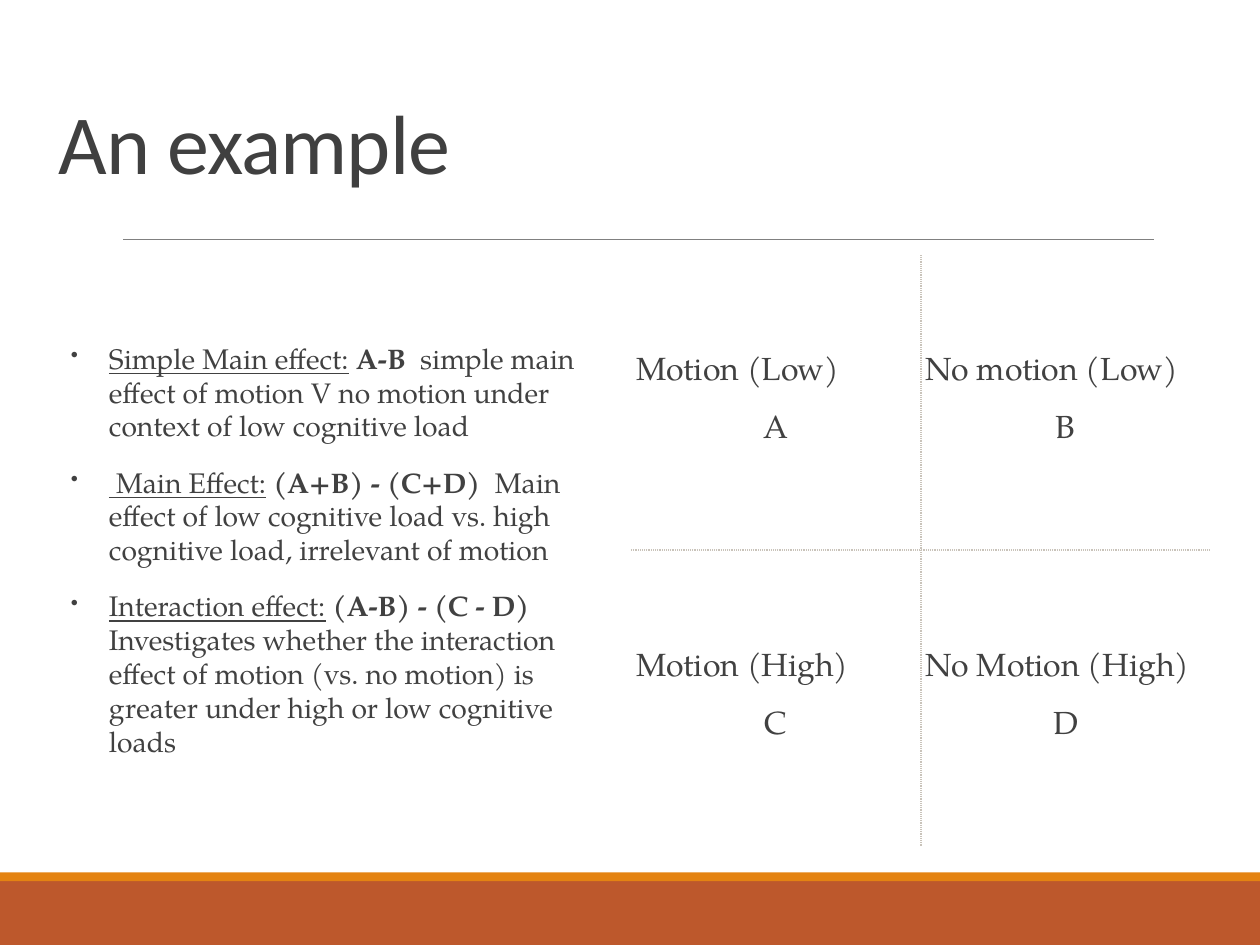
from lxml import etree
from pptx import Presentation
from pptx.dml.color import RGBColor
from pptx.enum.shapes import MSO_CONNECTOR, MSO_SHAPE
from pptx.enum.text import MSO_ANCHOR, PP_ALIGN
from pptx.oxml import parse_xml
from pptx.oxml.ns import nsdecls, qn
from pptx.util import Inches, Pt

RECTANGLE = MSO_SHAPE.RECTANGLE
STRAIGHT = MSO_CONNECTOR.STRAIGHT
BOTTOM, MIDDLE = MSO_ANCHOR.BOTTOM, MSO_ANCHOR.MIDDLE
LEFT, CENTER = PP_ALIGN.LEFT, PP_ALIGN.CENTER

COLORS = {
    "footer": "BD582C",
    "stripe": "E48312",
    "rule": "808080",
    "title": "404040",
    "body": "414141",
    "grid": "C9C3BA",
}
TITLE_FONT = "Calibri"
BODY_FONT = "TeX Gyre Pagella"
INSET = 0.06

EFFECTS = [
    ("Simple Main effect:", "A-B ",
     " simple main effect of motion V no motion under context of low cognitive load"),
    (" Main Effect:", "(A+B) - (C+D) ",
     " Main effect of low cognitive load vs. high cognitive load, irrelevant of motion"),
    ("Interaction effect:", "(A-B) - (C - D) ",
     "Investigates whether the interaction effect of motion (vs. no motion) "
     "is greater under high or low cognitive loads"),
]
CONDITIONS = [
    [("Motion (Low)", "A"), ("No motion (Low)", "B")],
    [("Motion (High)", "C"), ("No Motion (High)", "D")],
]


class SlideBuilder:
    def __init__(self, slide):
        self.slide = slide

    def color(self, name):
        return RGBColor.from_string(COLORS[name])

    def run(self, paragraph, text, size, font=BODY_FONT, color="body", bold=False, underline=False):
        run = paragraph.add_run()
        run.text = text
        run.font.name = font
        run.font.size = Pt(size)
        run.font.color.rgb = self.color(color)
        run.font.bold = bold
        run.font.underline = underline
        return run

    def band(self, top, height, color):
        shape = self.slide.shapes.add_shape(
            RECTANGLE, 0, Inches(top), Inches(14.22), Inches(height))
        shape.shadow.inherit = False
        shape.fill.solid()
        shape.fill.fore_color.rgb = self.color(color)
        shape.line.fill.background()

    def rule(self, left, right, top):
        line = self.slide.shapes.add_connector(
            STRAIGHT, Inches(left), Inches(top), Inches(right), Inches(top))
        line.line.color.rgb = self.color("rule")
        line.line.width = Pt(0.5)
        etree.SubElement(line._element.spPr, qn("a:effectLst"))

    def text_frame(self, left, top, width, height, anchor):
        box = self.slide.shapes.add_textbox(
            Inches(left), Inches(top), Inches(width), Inches(height))
        frame = box.text_frame
        frame.word_wrap = True
        frame.vertical_anchor = anchor
        return frame

    def set_insets(self, target):
        target.margin_left = target.margin_right = Inches(INSET)
        target.margin_top = target.margin_bottom = Inches(INSET)

    def title(self, text):
        frame = self.text_frame(0.56, 0.88, 13.11, 1.33, BOTTOM)
        paragraph = frame.paragraphs[0]
        paragraph.line_spacing = 0.85
        run = self.run(paragraph, text, 68.3, TITLE_FONT, "title")
        run.font._element.set("spc", "-70")

    def bullet(self, paragraph):
        paragraph.space_before = Pt(18)
        properties = paragraph._p.get_or_add_pPr()
        properties.set("marL", str(Inches(0.43)))
        properties.set("indent", str(Inches(-0.43)))
        etree.SubElement(properties, qn("a:buSzPct")).set("val", "75000")
        etree.SubElement(properties, qn("a:buChar")).set("char", "•")

    def effects(self, items):
        frame = self.text_frame(0.74, 3.61, 6.16, 5.19, MIDDLE)
        self.set_insets(frame)
        for index, (name, contrast, meaning) in enumerate(items):
            paragraph = frame.add_paragraph() if index else frame.paragraphs[0]
            self.bullet(paragraph)
            self.run(paragraph, name, 23, underline=True)
            self.run(paragraph, " ", 23)
            self.run(paragraph, contrast, 23, bold=True)
            self.run(paragraph, meaning, 23)

    def borders(self, cell, visible):
        properties = cell._tc.get_or_add_tcPr()
        for side in "LRTB":
            if side in visible:
                content = (f'<a:solidFill><a:srgbClr val="{COLORS["grid"]}"/></a:solidFill>'
                           '<a:prstDash val="sysDot"/>')
            else:
                content = "<a:noFill/>"
            properties.append(parse_xml(
                f'<a:ln{side} {nsdecls("a")} w="{Pt(2)}">{content}</a:ln{side}>'))

    def condition_table(self, rows):
        table = self.slide.shapes.add_table(
            2, 2, Inches(7.12), Inches(2.88), Inches(6.54), Inches(6.67)).table
        table.first_row = table.horz_banding = False
        for row_index, row in enumerate(rows):
            for column_index, (condition, letter) in enumerate(row):
                cell = table.cell(row_index, column_index)
                self.borders(cell, "RL"[column_index] + "BT"[row_index])
                cell.fill.background()
                cell.vertical_anchor = MIDDLE
                self.set_insets(cell)
                heading = cell.text_frame.paragraphs[0]
                heading.alignment = LEFT
                self.run(heading, condition, 26)
                label = cell.text_frame.add_paragraph()
                label.alignment = CENTER
                label.space_before = Pt(21)
                self.run(label, letter, 26)


def main():
    presentation = Presentation()
    presentation.slide_width = Inches(14.22)
    presentation.slide_height = Inches(10.67)
    builder = SlideBuilder(presentation.slides.add_slide(presentation.slide_layouts[6]))
    builder.band(9.95, 0.72, "footer")
    builder.band(9.85, 0.1, "stripe")
    builder.rule(1.39, 13.02, 2.7)
    builder.title("An example")
    builder.condition_table(CONDITIONS)
    builder.effects(EFFECTS)
    presentation.save("out.pptx")


if __name__ == "__main__":
    main()
